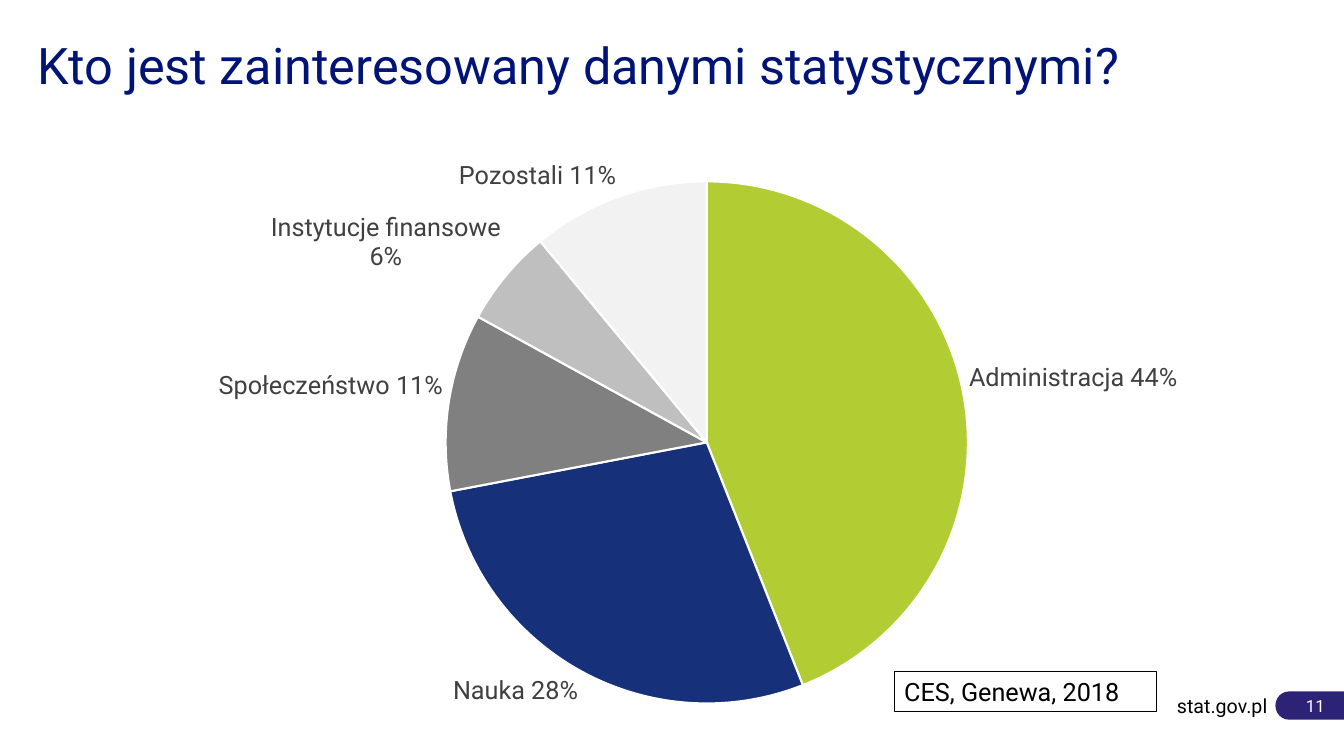
from lxml import etree
from pptx import Presentation
from pptx.chart.data import CategoryChartData
from pptx.dml.color import RGBColor
from pptx.enum.chart import XL_CHART_TYPE, XL_LABEL_POSITION
from pptx.enum.shapes import MSO_SHAPE
from pptx.enum.text import MSO_ANCHOR, PP_ALIGN
from pptx.oxml.ns import qn
from pptx.util import Inches, Pt

PIE = XL_CHART_TYPE.PIE
OUTSIDE_END = XL_LABEL_POSITION.OUTSIDE_END
TERMINATOR, RECTANGLE = MSO_SHAPE.FLOWCHART_TERMINATOR, MSO_SHAPE.RECTANGLE
TOP, MIDDLE, BOTTOM = MSO_ANCHOR.TOP, MSO_ANCHOR.MIDDLE, MSO_ANCHOR.BOTTOM
LEFT, RIGHT = PP_ALIGN.LEFT, PP_ALIGN.RIGHT

FONT = "Roboto"
NAVY = RGBColor(0x00, 0x13, 0x77)
PURPLE = RGBColor(0x2C, 0x22, 0x76)
BLACK = RGBColor(0x00, 0x00, 0x00)
WHITE = RGBColor(0xFF, 0xFF, 0xFF)
LABEL_GREY = RGBColor(0x40, 0x40, 0x40)
AUDIENCES = [
    ("Administracja", 0.44, RGBColor(0xB2, 0xCC, 0x34)),
    ("Nauka", 0.28, RGBColor(0x16, 0x30, 0x7A)),
    ("Społeczeństwo", 0.11, RGBColor(0x80, 0x80, 0x80)),
    ("Instytucje finansowe", 0.06, RGBColor(0xBF, 0xBF, 0xBF)),
    ("Pozostali", 0.11, RGBColor(0xF2, 0xF2, 0xF2)),
]
TWO_LINE_LABEL = 3
MARGIN, CONTENT_WIDTH = 0.37, 12.6
CHART_TOP, CHART_HEIGHT = 1.39, 5.93
PIE_LEFT, PIE_TOP, PIE_SIZE = 4.42, 1.8, 5.18


def set_font(font, size, color):
    for name, value in {"name": FONT, "size": Pt(size)}.items():
        setattr(font, name, value)
    font.color.rgb = color


def write_text(shape, text, size, color, align, anchor, side_margins):
    frame = shape.text_frame
    margin_left, margin_right = side_margins
    frame_format = {
        "word_wrap": True, "vertical_anchor": anchor,
        "margin_left": Inches(margin_left), "margin_right": Inches(margin_right),
        "margin_top": Inches(0.05), "margin_bottom": Inches(0.05),
    }
    for name, value in frame_format.items():
        setattr(frame, name, value)
    paragraph = frame.paragraphs[0]
    paragraph.alignment = align
    run = paragraph.add_run()
    run.text = text
    set_font(run.font, size, color)


presentation = Presentation()
presentation.slide_width = Inches(13.33)
presentation.slide_height = Inches(7.5)
slide = presentation.slides.add_slide(presentation.slide_layouts[5])

# Footer
page_badge = slide.shapes.add_shape(
    TERMINATOR, Inches(12.65), Inches(6.86), Inches(0.83), Inches(0.28))
page_badge.shadow.inherit = False
page_badge.fill.solid()
page_badge.fill.fore_color.rgb = PURPLE
page_badge.line.fill.background()
write_text(page_badge, "11", 12, WHITE, RIGHT, MIDDLE, (0.04, 0.3))

website = slide.shapes.add_textbox(
    Inches(11.59), Inches(6.83), Inches(0.98), Inches(0.34))
write_text(website, "stat.gov.pl", 14, BLACK, RIGHT, MIDDLE, (0, 0))

# Title
title = slide.shapes.title
title.left, title.top = Inches(MARGIN), Inches(0.21)
title.width, title.height = Inches(CONTENT_WIDTH), Inches(0.79)
write_text(title, "Kto jest zainteresowany danymi statystycznymi?",
           36, NAVY, LEFT, BOTTOM, (0, 0))
title.text_frame.paragraphs[0].line_spacing = 0.9

# Pie chart
chart_data = CategoryChartData(number_format="0%")
chart_data.categories = [name for name, share, color in AUDIENCES]
chart_data.add_series("Series 1", [share for name, share, color in AUDIENCES])
chart = slide.shapes.add_chart(
    PIE, Inches(MARGIN), Inches(CHART_TOP),
    Inches(CONTENT_WIDTH), Inches(CHART_HEIGHT), chart_data).chart
chart.has_legend = False
chart.has_title = False
set_font(chart.font, 10, BLACK)
plot = chart.plots[0]
plot.vary_by_categories = True
series = plot.series[0]

labels = series.data_labels
label_format = {
    "show_value": True, "show_category_name": True, "show_percentage": False,
    "show_legend_key": False, "position": OUTSIDE_END,
    "number_format": "0%", "number_format_is_linked": False,
}
for name, value in label_format.items():
    setattr(labels, name, value)
set_font(labels.font, 18, LABEL_GREY)

for index, (name, share, color) in enumerate(AUDIENCES):
    point = series.points[index]
    point.format.fill.solid()
    point.format.fill.fore_color.rgb = color
    point.format.line.color.rgb = WHITE
    point.format.line.width = Pt(1.5)

two_line_label = series.points[TWO_LINE_LABEL].data_label
two_line_label.position = OUTSIDE_END
set_font(two_line_label.font, 18, LABEL_GREY)
for flag in series._element.xpath(".//c:dLbl/c:showCatName"):
    flag.set("val", "1")
for last_flag in series._element.xpath(".//c:showBubbleSize"):
    separator = etree.Element(qn("c:separator"))
    separator.text = "\n" if last_flag.getparent().tag == qn("c:dLbl") else " "
    last_flag.addnext(separator)

# Fixed position of the pie, as shares of the chart's size
plot_area = chart._chartSpace.chart.plotArea
for old_layout in plot_area.findall(qn("c:layout")):
    plot_area.remove(old_layout)
layout = etree.Element(qn("c:layout"))
plot_area.insert(0, layout)
manual_layout = etree.SubElement(layout, qn("c:manualLayout"))
layout_values = {
    "layoutTarget": "inner", "xMode": "edge", "yMode": "edge",
    "x": (PIE_LEFT - MARGIN) / CONTENT_WIDTH,
    "y": (PIE_TOP - CHART_TOP) / CHART_HEIGHT,
    "w": PIE_SIZE / CONTENT_WIDTH, "h": PIE_SIZE / CHART_HEIGHT,
}
for name, value in layout_values.items():
    etree.SubElement(manual_layout, qn(f"c:{name}")).set("val", str(value))

# Source of the data
source_box = slide.shapes.add_shape(
    RECTANGLE, Inches(8.87), Inches(6.66), Inches(2.6), Inches(0.4))
source_box.shadow.inherit = False
source_box.fill.background()
source_box.line.color.rgb = BLACK
source_box.line.width = Pt(0.25)
write_text(source_box, "CES, Genewa, 2018", 18, BLACK, LEFT, TOP, (0.1, 0.1))

presentation.save("out.pptx")
